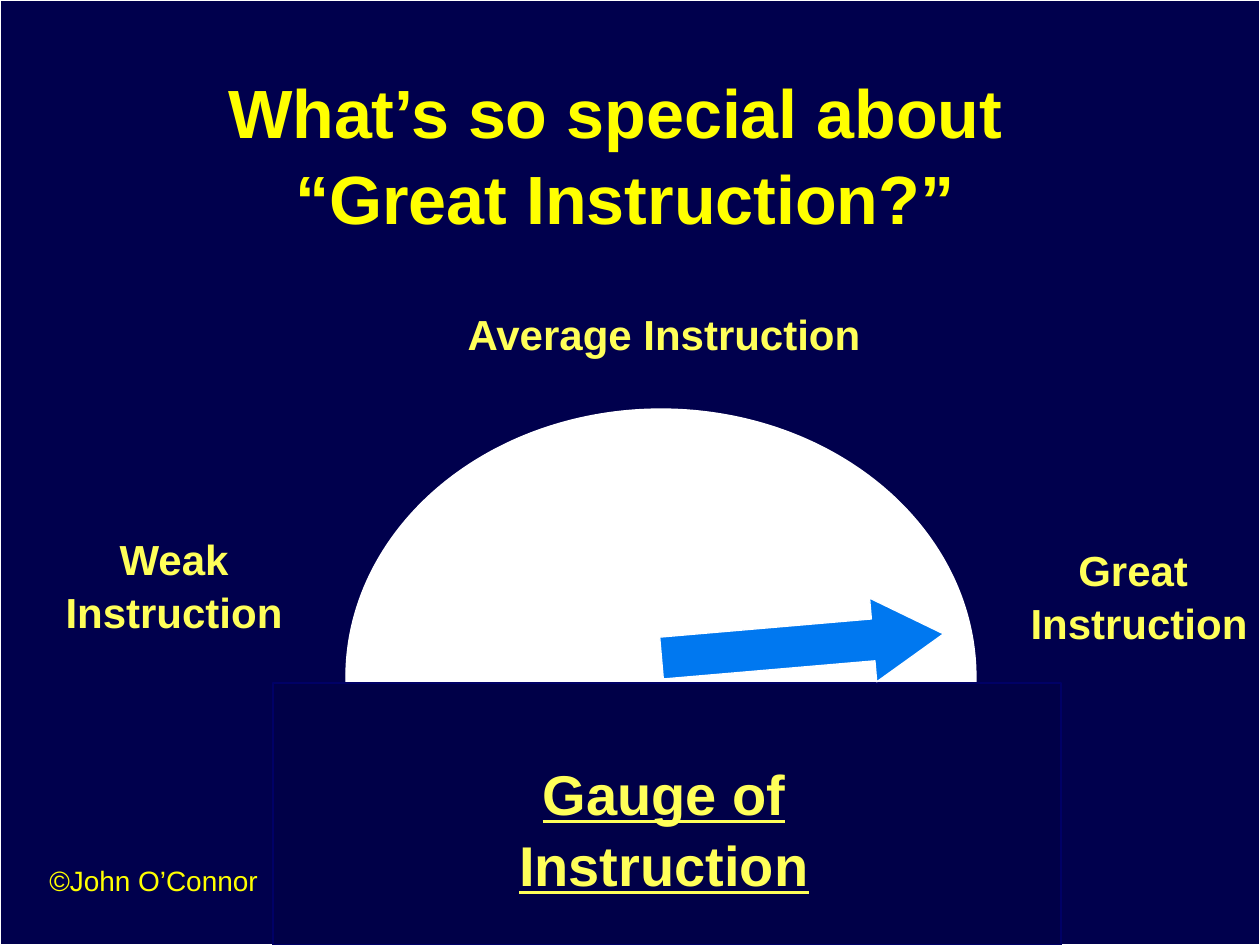
from pptx import Presentation
from pptx.dml.color import RGBColor
from pptx.enum.shapes import MSO_SHAPE
from pptx.enum.text import MSO_ANCHOR, PP_ALIGN
from pptx.util import Pt

# Content: text, box in px (left, top, width, height), format
TITLE = "What’s so special about \v“Great Instruction?”"
TITLE_BOX = (53, 63, 1144, 179)
LABELS = [
    ("Weak\nInstruction", (52, 525, 244, 115), {}),
    ("Average Instruction", (454, 300, 420, 63), {}),
    ("Great \nInstruction", (1017, 536, 244, 115), {}),
    ("Gauge of\vInstruction", (378, 750, 572, 147), dict(size=32, underline=True)),
    ("©John O’Connor", (37, 857, 236, 47),
     dict(size=16, color="yellow", bold=False, align=PP_ALIGN.LEFT, spacing=1.0)),
]
COLORS = {
    "back": "000066", "panel": "00004D", "base": "000048", "white": "FFFFFF",
    "yellow": "FFFF00", "label": "FFFF59", "needle": "0078F0",
}
W, H = 1260, 945
SCALE = 914400 / 126


def rgb(name):
    return RGBColor.from_string(COLORS[name])


def emu(box):
    return [round(v * SCALE) for v in box]


def write(sp, text, size=24, color="label", bold=True, underline=False,
          align=PP_ALIGN.CENTER, spacing=1.05, anchor=MSO_ANCHOR.TOP, wrap=False):
    tf = sp.text_frame
    tf.text = text
    tf.word_wrap = wrap
    tf.vertical_anchor = anchor
    for p in tf.paragraphs:
        p.alignment = align
        p.line_spacing = spacing
        p.space_before = Pt(0)
        for r in p.runs:
            r.font.name = "Arial"
            r.font.size = Pt(size)
            r.font.bold = bold
            r.font.underline = underline
            r.font.color.rgb = rgb(color)


def draw(shapes, kind, box, fill, line):
    sp = shapes.add_shape(kind, *emu(box))
    sp.shadow.inherit = False
    sp.fill.solid()
    sp.fill.fore_color.rgb = rgb(fill)
    sp.line.color.rgb = rgb(line)
    sp.line.width = Pt(0.75)
    return sp


prs = Presentation()
prs.slide_width, prs.slide_height = emu((W, H))
s = prs.slides.add_slide(prs.slide_layouts[5])
s.background.fill.solid()
s.background.fill.fore_color.rgb = rgb("back")

# Panel behind everything
draw(s.shapes, MSO_SHAPE.RECTANGLE, (0, 0, W, H), "panel", "white")

# Title, raised above the panel
title = s.shapes.title
title.element.getparent().append(title.element)
title.left, title.top, title.width, title.height = emu(TITLE_BOX)
write(title, TITLE, size=39, color="yellow", anchor=MSO_ANCHOR.MIDDLE, wrap=True)

# Gauge: dial with its lower half covered by the base
gauge = s.shapes.add_group_shape()
draw(gauge.shapes, MSO_SHAPE.OVAL, (346, 409, 630, 536), "white", "white")
draw(gauge.shapes, MSO_SHAPE.RECTANGLE, (273, 683, 788, 262), "base", "back")

# Labels
for text, box, style in LABELS:
    write(s.shapes.add_textbox(*emu(box)), text, **style)

# Needle
needle = draw(s.shapes, MSO_SHAPE.RIGHT_ARROW, (661, 604, 283, 84), "needle", "white")
needle.adjustments[0] = 0.5
needle.adjustments[1] = 0.84
needle.rotation = 355.1

prs.save("out.pptx")
